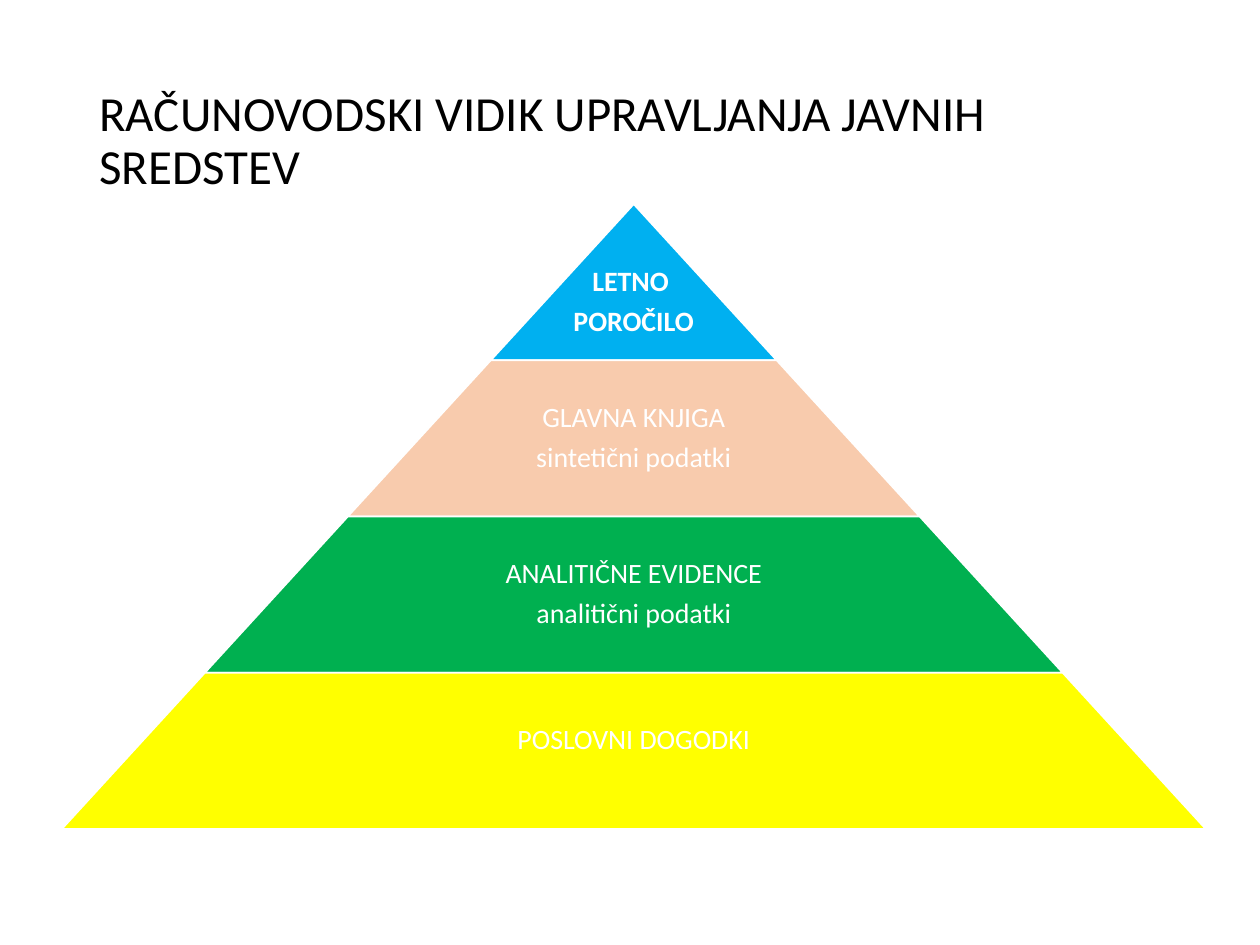
from dataclasses import dataclass

from pptx import Presentation
from pptx.dml.color import RGBColor
from pptx.enum.shapes import MSO_SHAPE as Shape
from pptx.enum.text import MSO_ANCHOR as Anchor, PP_ALIGN as Align
from pptx.slide import Slide
from pptx.util import Inches, Pt

CENTER = 5.03
TOP = 1.62
TIER_HEIGHT = 1.24
WIDTH_STEP = 2.27
SLOPE = WIDTH_STEP / 2 / TIER_HEIGHT
LABEL_SHARE = 0.65
INSET = 0.02


@dataclass
class Tier:
    lines: list[str]
    fill: str
    bold: bool = False
    label_share: float = LABEL_SHARE
    push_down: float = 0
    push_up: float = 0


TIERS = [
    Tier(["LETNO ", "POROČILO"], "00B0F0", bold=True, label_share=1, push_down=0.32),
    Tier(["GLAVNA KNJIGA", "sintetični podatki"], "F8CBAD"),
    Tier(["ANALITIČNE EVIDENCE", "analitični podatki"], "00B050"),
    Tier(["POSLOVNI DOGODKI"], "FFFF00", push_up=0.16),
]


def color(code: str) -> RGBColor:
    return RGBColor.from_string(code)


def add_text(page: Slide, lines: list[str], left: float, top: float,
             width: float, height: float, *, size: float, ink: str,
             bold: bool = False, align: Align = Align.LEFT, after: float = 0,
             insets: tuple[float, float, float, float] = (0.1, 0.05, 0.1, 0.05)) -> None:
    box = page.shapes.add_textbox(Inches(left), Inches(top), Inches(width), Inches(height))
    frame = box.text_frame
    frame.word_wrap = True
    frame.vertical_anchor = Anchor.MIDDLE
    frame.margin_left, frame.margin_top, frame.margin_right, frame.margin_bottom = map(Inches, insets)
    for index, line in enumerate(lines):
        para = frame.add_paragraph() if index else frame.paragraphs[0]
        para.alignment = align
        para.line_spacing = 0.9
        para.space_after = Pt(after)
        span = para.add_run()
        span.text = line
        span.font.name = "Calibri"
        span.font.size = Pt(size)
        span.font.bold = bold
        span.font.color.rgb = color(ink)


def add_tier(page: Slide, tier: Tier, level: int) -> None:
    width = WIDTH_STEP * (level + 1)
    top = TOP + TIER_HEIGHT * level
    band = page.shapes.add_shape(Shape.TRAPEZOID, Inches(CENTER - width / 2), Inches(top),
                                 Inches(width), Inches(TIER_HEIGHT))
    band.adjustments[0] = SLOPE
    band.shadow.inherit = False
    band.fill.solid()
    band.fill.fore_color.rgb = color(tier.fill)
    band.line.color.rgb = color("FFFFFF")
    band.line.width = Pt(1)

    label_width = width * tier.label_share
    add_text(page, tier.lines, CENTER - label_width / 2, top, label_width, TIER_HEIGHT,
             size=16, ink="FFFFFF", bold=tier.bold, align=Align.CENTER, after=5.6,
             insets=(INSET, INSET + tier.push_down, INSET, INSET + tier.push_up))


def main() -> None:
    deck = Presentation()
    deck.slide_width, deck.slide_height = Inches(10), Inches(7.5)
    page = deck.slides.add_slide(deck.slide_layouts[6])
    add_text(page, ["RAČUNOVODSKI VIDIK UPRAVLJANJA JAVNIH SREDSTEV"],
             0.69, 0.4, 8.62, 1.45, size=28, ink="000000")
    for level, tier in enumerate(TIERS):
        add_tier(page, tier, level)
    deck.save("out.pptx")


if __name__ == "__main__":
    main()
